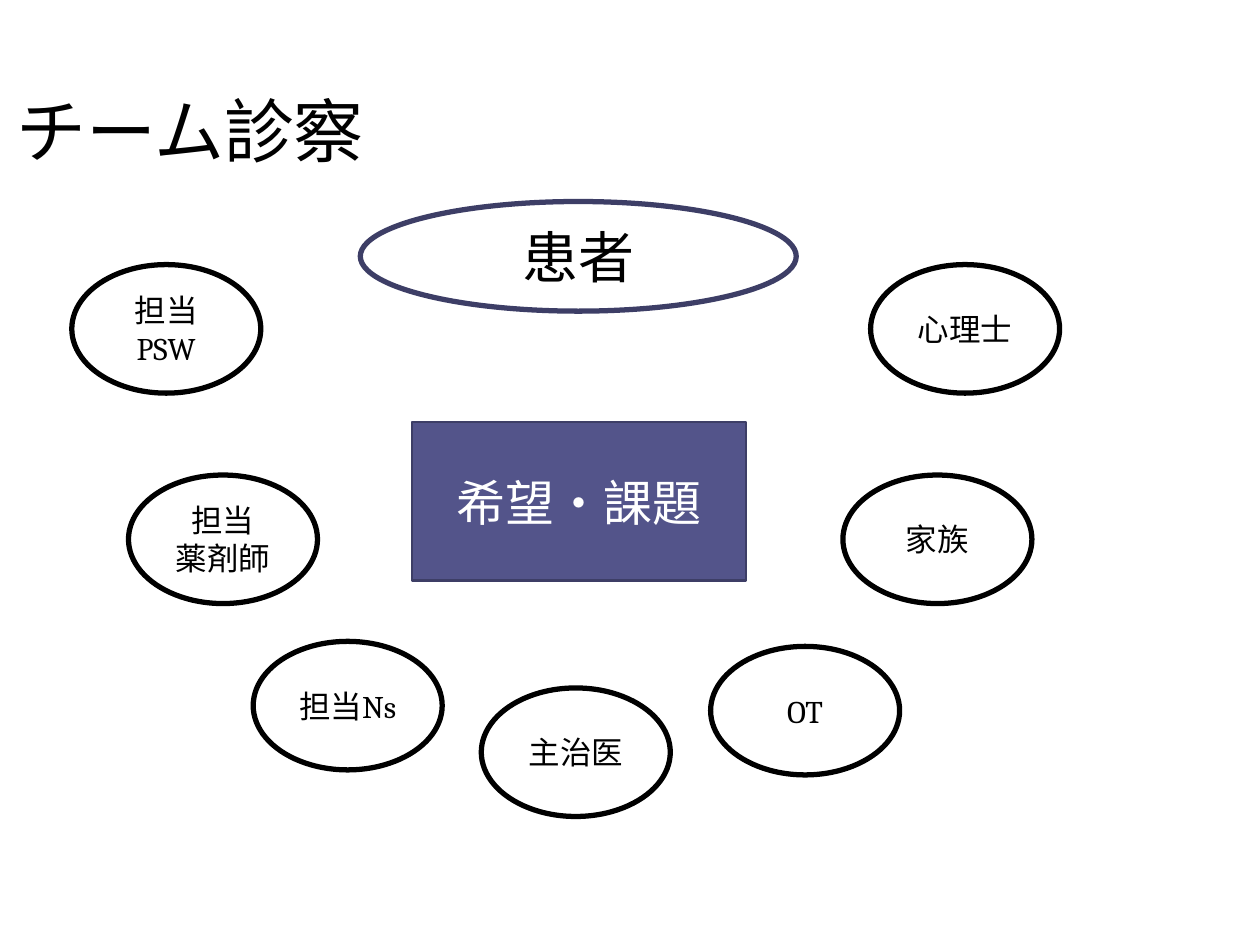
from dataclasses import dataclass

from pptx import Presentation
from pptx.dml.color import RGBColor
from pptx.enum.shapes import MSO_SHAPE as Shape
from pptx.enum.text import MSO_ANCHOR as Anchor, PP_ALIGN as Align
from pptx.util import Inches, Pt


@dataclass(frozen=True)
class Theme:
    ink: str = "000000"
    paper: str = "FFFFFF"
    accent: str = "53548A"
    accent_edge: str = "3D3E66"
    title_font: str = "Roboto"
    body_font: str = "Cambria"
    title_size: int = 40
    patient_size: int = 32
    topic_size: int = 28
    member_size: int = 18
    oval_edge: float = 3
    topic_edge: float = 1.5


THEME = Theme()
SLIDE_WIDTH, SLIDE_HEIGHT = Inches(10), Inches(7.5)

# Left, top, width and height in percent of the slide
TITLE_AREA = (0.3, 5.87, 90, 15.6)
PATIENT_AREA = (28.6, 21.33, 34.6, 11.6)
TOPIC_AREA = (32.7, 44.67, 26.5, 16.8)
MEMBER_SIZE = (15, 13.6)
UPPER_ROW, MIDDLE_ROW = 28, 50.27
MEMBERS = [
    ("主治医", 38.2, 72.8),
    ("担当Ns", 20.1, 67.87),
    ("担当\n薬剤師", 10.2, MIDDLE_ROW),
    ("担当PSW", 5.7, UPPER_ROW),
    ("心理士", 69.1, UPPER_ROW),
    ("家族", 66.9, MIDDLE_ROW),
    ("OT", 56.4, 68.4),
]


def to_lengths(area):
    """Turn percentages of the slide into left, top, width and height."""
    sides = (SLIDE_WIDTH, SLIDE_HEIGHT) * 2
    return [round(side * share / 100) for side, share in zip(sides, area)]


def write(frame, wording, size, color, font, align):
    frame.text = wording
    frame.word_wrap = True
    frame.vertical_anchor = Anchor.MIDDLE
    for paragraph in frame.paragraphs:
        paragraph.alignment = align
        for run in paragraph.runs:
            run.font.name = font
            run.font.size = Pt(size)
            run.font.color.rgb = RGBColor.from_string(color)


def add_title(slide, wording):
    title = slide.shapes.title
    title.left, title.top, title.width, title.height = to_lengths(TITLE_AREA)
    write(title.text_frame, wording, THEME.title_size, THEME.ink,
          THEME.title_font, Align.LEFT)


def add_node(slide, kind, area, wording, size, color, edge, edge_width, fill=None):
    node = slide.shapes.add_shape(kind, *to_lengths(area))
    node.shadow.inherit = False
    if fill:
        node.fill.solid()
        node.fill.fore_color.rgb = RGBColor.from_string(fill)
    else:
        node.fill.background()
    node.line.color.rgb = RGBColor.from_string(edge)
    node.line.width = Pt(edge_width)
    write(node.text_frame, wording, size, color, THEME.body_font, Align.CENTER)


def add_oval(slide, area, wording, size, edge):
    add_node(slide, Shape.OVAL, area, wording, size, THEME.ink, edge, THEME.oval_edge)


def add_topic(slide, wording):
    add_node(slide, Shape.RECTANGLE, TOPIC_AREA, wording, THEME.topic_size,
             THEME.paper, THEME.accent_edge, THEME.topic_edge, THEME.accent)


def main():
    deck = Presentation()
    deck.slide_width, deck.slide_height = SLIDE_WIDTH, SLIDE_HEIGHT
    slide = deck.slides.add_slide(deck.slide_layouts.get_by_name("Title Only"))
    add_title(slide, "チーム診察")
    add_oval(slide, PATIENT_AREA, "患者", THEME.patient_size, THEME.accent_edge)
    for role, left, top in MEMBERS:
        add_oval(slide, (left, top, *MEMBER_SIZE), role, THEME.member_size, THEME.ink)
    add_topic(slide, "希望・課題")
    deck.save("out.pptx")


if __name__ == "__main__":
    main()
